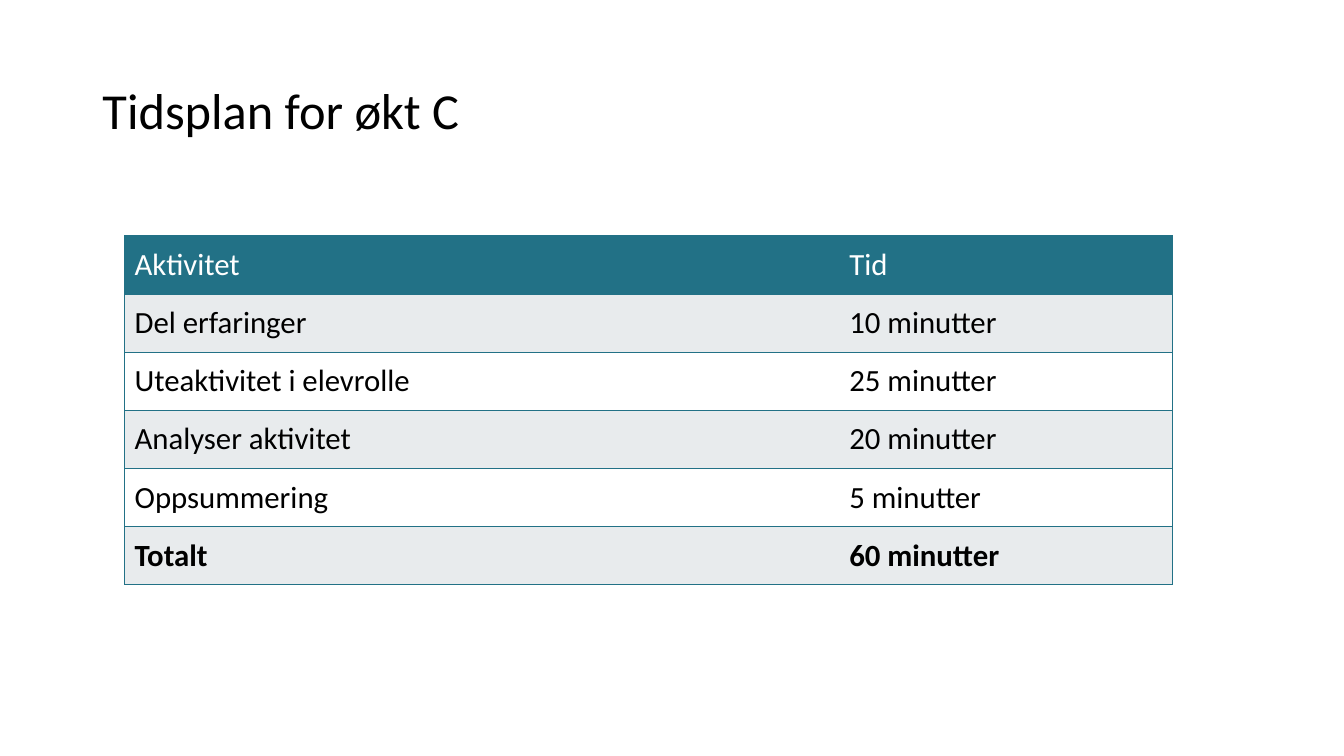
from lxml.etree import SubElement as Sub
from pptx import Presentation
from pptx.dml.color import RGBColor
from pptx.enum.text import MSO_ANCHOR as Anchor
from pptx.oxml.ns import qn
from pptx.util import Pt

TEAL, GREY, WHITE, BLACK = "227186", "E8EBED", "FFFFFF", "000000"
PLAN = [
    ("Aktivitet", "Tid"),
    ("Del erfaringer", "10 minutter"),
    ("Uteaktivitet i elevrolle", "25 minutter"),
    ("Analyser aktivitet", "20 minutter"),
    ("Oppsummering", "5 minutter"),
    ("Totalt", "60 minutter"),
]


def paint(target, color):
    target.rgb = RGBColor.from_string(color)


def style(para, size, color, bold=False):
    font = para.font
    font.name, font.size, font.bold = "Calibri", Pt(size), bold
    paint(font.color, color)


def border(cell, inner):
    props = cell._tc.get_or_add_tcPr()
    for side in "LRTB":
        line = Sub(props, qn(f"a:ln{side}"), w=str(Pt(1)))
        if side == inner:
            Sub(line, qn("a:noFill"))
        else:
            fill = Sub(line, qn("a:solidFill"))
            Sub(fill, qn("a:srgbClr"), val=TEAL)


def add_title(slide, text, left, top, width, height):
    title = slide.shapes.title
    title.left, title.top = Pt(left), Pt(top)
    title.width, title.height = Pt(width), Pt(height)
    frame = title.text_frame
    frame.text = text
    frame.vertical_anchor = Anchor.MIDDLE
    para = frame.paragraphs[0]
    para.line_spacing = 0.9
    style(para, 36, BLACK)
    para.alignment = 1


def add_plan(slide, rows, left, top, width, height):
    count = len(rows)
    table = slide.shapes.add_table(
        count, 2, Pt(left), Pt(top), Pt(width), Pt(height)
    ).table
    table.first_row = table.horz_banding = False
    first = 510.5
    for col, size in zip(table.columns, (first, width - first)):
        col.width = Pt(size)
    for r, texts in enumerate(rows):
        table.rows[r].height = Pt(height / count)
        shade = TEAL if r == 0 else GREY if r % 2 else WHITE
        for c, text in enumerate(texts):
            cell = table.cell(r, c)
            cell.text = text
            cell.vertical_anchor = Anchor.MIDDLE
            border(cell, "RL"[c])
            cell.fill.solid()
            paint(cell.fill.fore_color, shade)
            ink = BLACK if r else WHITE
            style(cell.text_frame.paragraphs[0], 22, ink, r == count - 1)


def main():
    deck = Presentation()
    deck.slide_width, deck.slide_height = Pt(960), Pt(540)
    slide = deck.slides.add_slide(deck.slide_layouts.get_by_name("Title Only"))
    add_title(slide, "Tidsplan for økt C", 66, 28.75, 828, 104.4)
    add_plan(slide, PLAN, 89, 168.5, 748.5, 249.2)
    deck.save("out.pptx")


if __name__ == "__main__":
    main()
